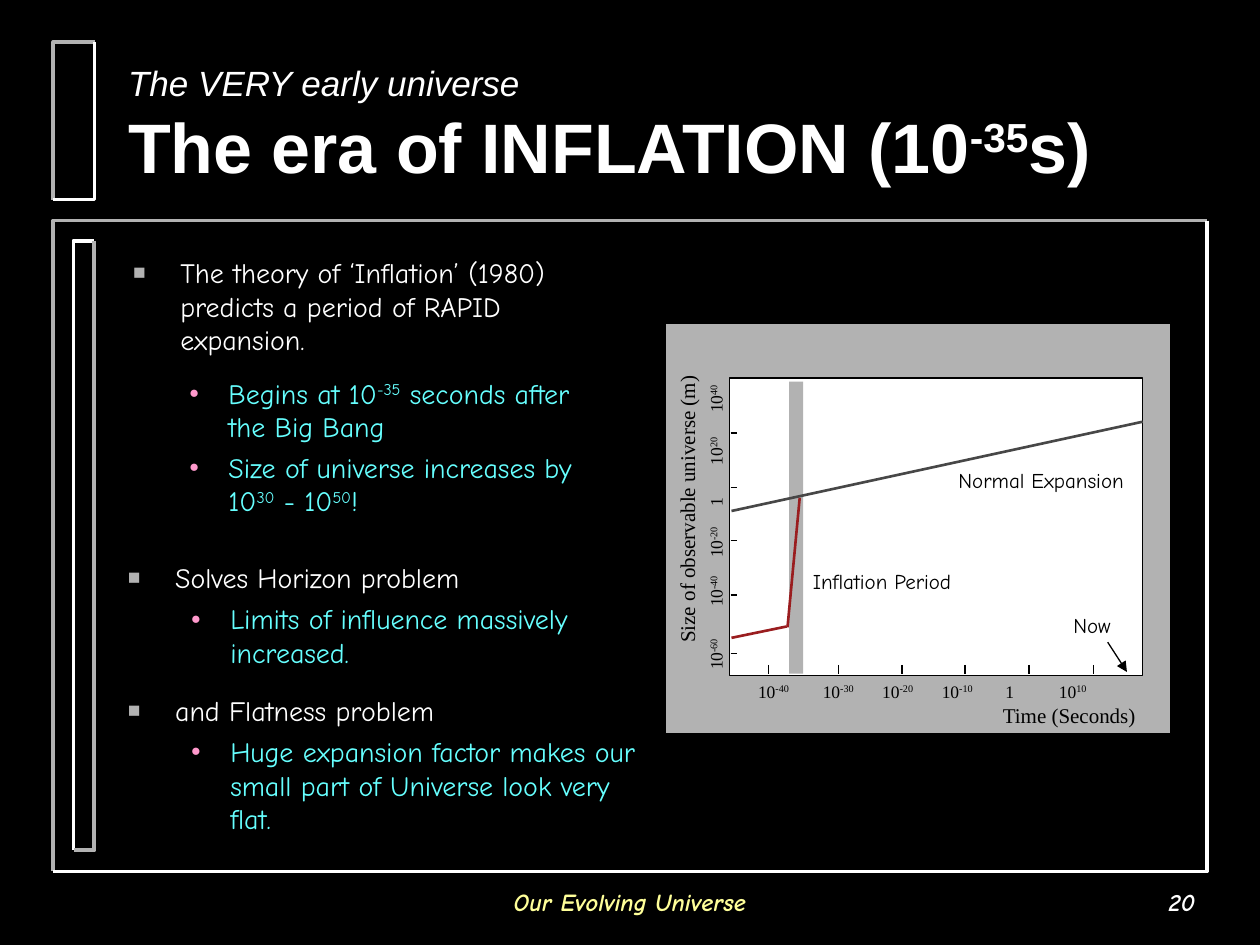
"""Build a slide on the era of inflation, with bullet notes and a log-log expansion diagram."""
from lxml.etree import SubElement
from pptx import Presentation
from pptx.dml.color import RGBColor
from pptx.enum.shapes import MSO_CONNECTOR, MSO_SHAPE
from pptx.enum.text import MSO_ANCHOR, MSO_AUTO_SIZE, PP_ALIGN
from pptx.oxml.ns import qn
from pptx.util import Pt

BLACK = RGBColor(0, 0, 0)
WHITE = RGBColor(255, 255, 255)
GREY = RGBColor(0xB2, 0xB2, 0xB2)
CHARCOAL = RGBColor(0x47, 0x47, 0x47)
RED = RGBColor(0x9A, 0x1D, 0x1F)
CYAN = RGBColor(0x66, 0xFF, 0xFF)
PINK = RGBColor(0xFF, 0x99, 0xCC)
YELLOW = RGBColor(0xFF, 0xFF, 0x99)
COMIC, SERIF, SANS = "Comic Neue", "Times New Roman", "Arial"

TITLE = [("The VERY early universe", 20, False, True),
         ("The era of INFLATION (10^-35^s)", 40, True, False)]
FRAMES = [(30.5, 126, 689.5, 498, GREY, WHITE),
          (42, 137.5, 54, 486, WHITE, GREY),
          (30.5, 24, 54, 114, GREY, WHITE)]
NOTES = [
    ((69, 142.5, 288, 72),
     [(0, "The theory of ‘Inflation’ (1980) predicts a period of RAPID expansion.")]),
    ((65, 211.5, 288, 100),
     [(1, "Begins at 10^-35^ seconds after the Big Bang"),
      (1, "Size of universe increases by 10^30^ - 10^50^!")]),
    ((66, 317, 312, 76),
     [(0, "Solves Horizon problem"),
      (1, "Limits of influence massively increased.")]),
    ((66, 393, 312, 100),
     [(0, "and Flatness problem"),
      (1, "Huge expansion factor makes our small part of Universe look very flat.")]),
]
LEVELS = [(27, 27, "■", 75, GREY, WHITE), (58.5, 22.5, "●", 60, PINK, CYAN)]
FOOTERS = [("Our Evolving Universe", (246, 497.5, 228, 36), PP_ALIGN.CENTER, YELLOW),
           ("20", (540, 497.5, 150, 36), PP_ALIGN.RIGHT, WHITE)]

PANEL = (380, 184.5, 289, 234.5)
PLOT = (417, 216, 236, 170)
BAND = (451, 218, 8, 167)
TIME_TICKS = [("10^-40^", 439, 442), ("10^-30^", 479, 479), ("10^-20^", 515.5, 513),
              ("10^-10^", 551.5, 547), ("1", 588, 577), ("10^10^", 625, 613)]
SIZE_TICKS = [("10^-60^", 373.5, 374), ("10^-40^", 340, 338), ("10^-20^", 309, 310),
              ("1", 278.5, 287), ("10^20^", 247.5, 258), ("10^40^", 216.5, 228)]
CURVES = [((418, 292), (653, 241), CHARCOAL),
          ((418, 364.5), (449.5, 358), RED),
          ((457, 284.5), (450, 358.5), RED)]
LABELS = [("Normal Expansion", 595, 274.5, 114, 24, COMIC, 0),
          ("Inflation Period", 504, 332, 104, 24, COMIC, 0),
          ("Now", 624, 357, 38, 24, COMIC, 0),
          ("Time (Seconds)", 611, 408.5, 89, 21, SERIF, 0),
          ("Size of observable universe (m)", 392.5, 291, 164, 21, SERIF, 270)]


def write(para, text):
    """Add text to a paragraph, raising the parts between carets."""
    spans = []
    for index, part in enumerate(text.split("^")):
        if part:
            span = para.add_run()
            span.text = part
            if index % 2:
                span._r.get_or_add_rPr().set("baseline", "30000")
            spans.append(span)
    return spans


def style(font, name, size, color):
    font.name, font.size, font.color.rgb = name, Pt(size), color


def add_box(page, area):
    box = page.shapes.add_textbox(*map(Pt, area))
    box.text_frame.word_wrap = True
    return box


def add_label(page, text, x, y, width, height, name, turn, size=12):
    box = add_box(page, (x - width / 2, y - height / 2, width, height))
    box.rotation = turn
    frame = box.text_frame
    frame.word_wrap = False
    frame.vertical_anchor = MSO_ANCHOR.MIDDLE
    frame.margin_left = frame.margin_right = frame.margin_top = frame.margin_bottom = 0
    para = frame.paragraphs[0]
    para.alignment = PP_ALIGN.CENTER
    style(para.font, name, size, BLACK)
    write(para, text)


def add_line(page, start, end, color=BLACK, width=0.75):
    line = page.shapes.add_connector(MSO_CONNECTOR.STRAIGHT, *map(Pt, start + end))
    line.line.color.rgb, line.line.width = color, Pt(width)
    SubElement(line._element.spPr, qn("a:effectLst"))
    return line


def add_rectangle(page, area, color, outlined=True):
    shape = page.shapes.add_shape(MSO_SHAPE.RECTANGLE, *map(Pt, area))
    shape.shadow.inherit = False
    shape.fill.solid()
    shape.fill.fore_color.rgb = color
    if outlined:
        shape.line.color.rgb, shape.line.width = BLACK, Pt(0.75)
    else:
        shape.line.fill.background()


def add_frame(page, left, top, right, bottom, upper, lower):
    for corner, color in (((left, top), upper), ((right, bottom), lower)):
        builder = page.shapes.build_freeform(Pt(right), Pt(top))
        points = [corner, (left, bottom)]
        builder.add_line_segments([(Pt(x), Pt(y)) for x, y in points], close=False)
        shape = builder.convert_to_shape()
        shape.shadow.inherit = False
        shape.fill.background()
        shape.line.color.rgb, shape.line.width = color, Pt(2.25)


def add_title(page):
    title = page.shapes.title
    title.left, title.top, title.width, title.height = map(Pt, (66, 27.5, 623, 87))
    frame = title.text_frame
    frame.auto_size = MSO_AUTO_SIZE.NONE
    frame.vertical_anchor = MSO_ANCHOR.MIDDLE
    para = frame.paragraphs[0]
    para.alignment = PP_ALIGN.LEFT
    for index, (text, size, bold, italic) in enumerate(TITLE):
        if index:
            para.add_line_break()
        for span in write(para, text):
            style(span.font, SANS, size, WHITE)
            span.font.bold, span.font.italic = bold, italic


def add_notes(page, area, items):
    frame = add_box(page, area).text_frame
    for index, (level, text) in enumerate(items):
        margin, hang, mark, percent, mark_color, color = LEVELS[level]
        para = frame.add_paragraph() if index else frame.paragraphs[0]
        para.level = level
        para.space_before = Pt(4)
        props = para._p.get_or_add_pPr()
        props.set("marL", str(Pt(margin)))
        props.set("indent", str(-Pt(hang)))
        SubElement(SubElement(props, qn("a:buClr")), qn("a:srgbClr"), val=str(mark_color))
        SubElement(props, qn("a:buSzPct"), val=str(percent * 1000))
        SubElement(props, qn("a:buFont"), typeface=SANS)
        SubElement(props, qn("a:buChar"), char=mark)
        style(para.font, COMIC, 16, color)
        write(para, text)


def add_diagram(page):
    add_rectangle(page, PANEL, GREY)
    add_rectangle(page, PLOT, WHITE)
    add_rectangle(page, BAND, GREY, outlined=False)
    left, top, width, height = PLOT
    floor = top + height
    for text, tick, center in TIME_TICKS:
        add_line(page, (tick, floor - 6), (tick, floor - 1))
        add_label(page, text, center, 395, 30, 16, SERIF, 0, 10)
    for text, tick, center in SIZE_TICKS:
        add_line(page, (left + 0.5, tick), (left + 4, tick))
        add_label(page, text, 409, center, 30, 16, SERIF, 270, 10)
    for start, end, color in CURVES:
        add_line(page, start, end, color, 1.5)
    arrow = add_line(page, (633, 367), (644, 384))
    SubElement(arrow.line._get_or_add_ln(), qn("a:tailEnd"), type="triangle")
    for label in LABELS:
        add_label(page, *label)


def main():
    deck = Presentation()
    deck.slide_width, deck.slide_height = Pt(720), Pt(540)
    page = deck.slides.add_slide(deck.slide_layouts[5])
    page.background.fill.solid()
    page.background.fill.fore_color.rgb = BLACK
    for frame in FRAMES:
        add_frame(page, *frame)
    add_title(page)
    for area, items in NOTES:
        add_notes(page, area, items)
    add_diagram(page)
    for text, area, alignment, color in FOOTERS:
        box = add_box(page, area)
        box.text_frame.vertical_anchor = MSO_ANCHOR.MIDDLE
        para = box.text_frame.paragraphs[0]
        para.alignment = alignment
        style(para.font, COMIC, 14, color)
        para.font.bold = para.font.italic = True
        write(para, text)
    deck.save("out.pptx")


if __name__ == "__main__":
    main()
